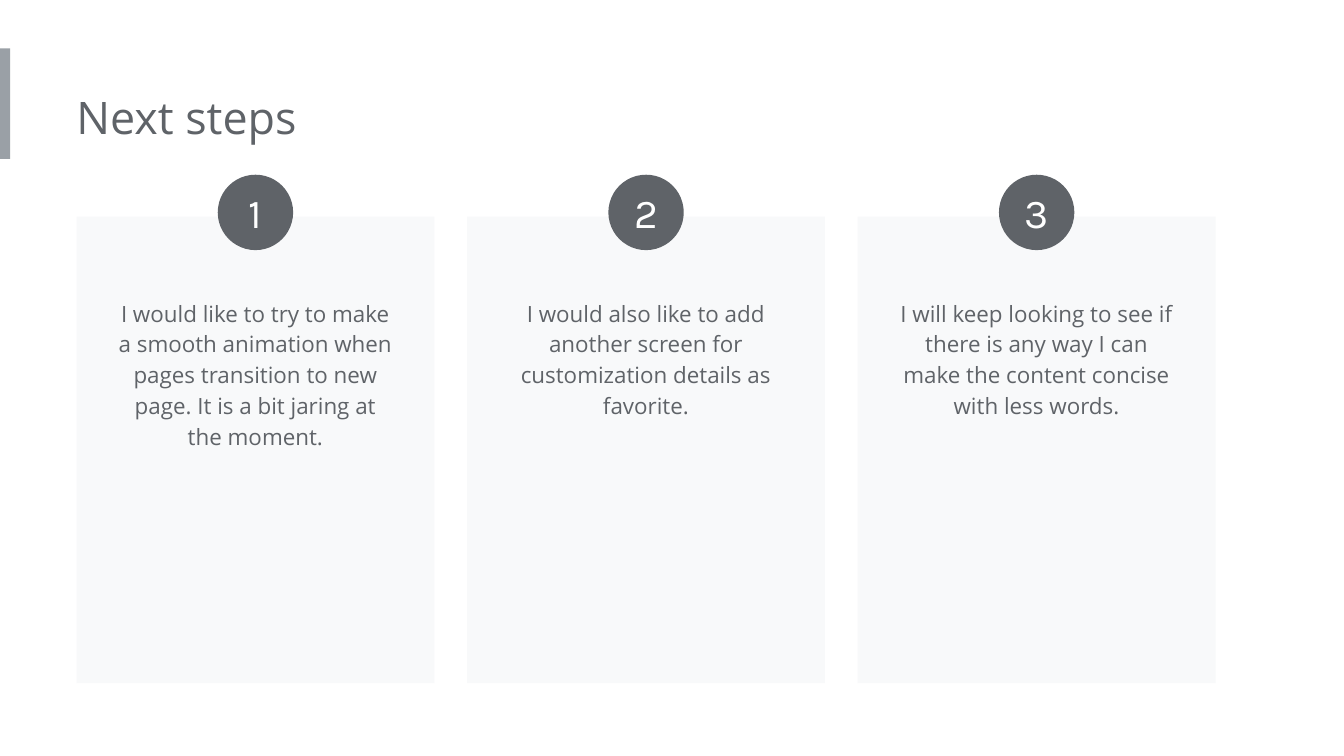
from pptx import Presentation
from pptx.dml.color import RGBColor
from pptx.enum.shapes import MSO_SHAPE as Shape
from pptx.enum.text import MSO_ANCHOR as Anchor, MSO_AUTO_SIZE as AutoSize, PP_ALIGN as Align
from pptx.util import Pt

COLORS = {
    "accent": "9AA0A6",
    "ink": "5F6368",
    "card": "F8F9FA",
    "white": "FFFFFF",
}

STEPS = [
    "I would like to try to make a smooth animation when pages transition to new page. "
    "It is a bit jaring at the moment.",
    "I would also like to add another screen for customization details as favorite.",
    "I will keep looking to see if there is any way I can make the content concise "
    "with less words.",
]

# Layout in points
CARD_LEFT, CARD_TOP, CARD_WIDTH, CARD_HEIGHT = 41, 116, 191.7, 250
CARD_PITCH = 209.25
BODY_TOP, BODY_WIDTH = 151.2, 161.3
BADGE_TOP, BADGE_SIZE = 93.6, 40.4

# Text formats
TITLE = {"name": "Open Sans", "size": Pt(24)}
BODY = {"name": "Open Sans", "size": Pt(12)}
NUMBER = {"name": "Karla", "size": Pt(22)}


def color(name):
    return RGBColor.from_string(COLORS[name])


def set_values(target, values):
    for key, value in values.items():
        setattr(target, key, value)


def write(frame, text, font, ink, margins, paragraph=None, **layout):
    """Put one formatted paragraph into a text frame."""
    left, top, right, bottom = (Pt(margin) for margin in margins)
    set_values(frame, {"margin_left": left, "margin_top": top, "margin_right": right,
                       "margin_bottom": bottom, "word_wrap": True, **layout})
    line = frame.paragraphs[0]
    set_values(line, paragraph or {})
    run = line.add_run()
    run.text = text
    set_values(run.font, font)
    run.font.color.rgb = color(ink)


def add_block(slide, kind, box, fill):
    block = slide.shapes.add_shape(kind, *(Pt(length) for length in box))
    block.shadow.inherit = False
    block.fill.solid()
    block.fill.fore_color.rgb = color(fill)
    block.line.fill.background()
    return block


def add_text(slide, box, text, font, margins, paragraph=None):
    frame = slide.shapes.add_textbox(*(Pt(length) for length in box)).text_frame
    write(frame, text, font, "ink", margins, paragraph,
          auto_size=AutoSize.SHAPE_TO_FIT_TEXT, vertical_anchor=Anchor.TOP)


def add_card(slide, left, text):
    add_block(slide, Shape.RECTANGLE, (left, CARD_TOP, CARD_WIDTH, CARD_HEIGHT), "card")
    body_left = left + (CARD_WIDTH - BODY_WIDTH) / 2
    add_text(slide, (body_left, BODY_TOP, BODY_WIDTH, 98), text, BODY, [7.2] * 4,
             {"alignment": Align.CENTER, "line_spacing": 1.15})


def add_badge(slide, left, number):
    badge_left = left + (CARD_WIDTH - BADGE_SIZE) / 2
    badge = add_block(slide, Shape.OVAL, (badge_left, BADGE_TOP, BADGE_SIZE, BADGE_SIZE), "ink")
    write(badge.text_frame, str(number), NUMBER, "white", [0] * 4,
          {"alignment": Align.CENTER}, vertical_anchor=Anchor.MIDDLE)


def main():
    deck = Presentation()
    deck.slide_width, deck.slide_height = Pt(720), Pt(405)
    slide = deck.slides.add_slide(deck.slide_layouts[6])

    # Accent bar and title
    add_block(slide, Shape.RECTANGLE, (0, 26, 5.5, 59.2), "accent")
    add_text(slide, (41, 41, 388, 44), "Next steps", TITLE, (0, 7.2, 7.2, 7.2))

    # Step cards with numbered badges
    for index, step in enumerate(STEPS):
        left = CARD_LEFT + index * CARD_PITCH
        add_card(slide, left, step)
        add_badge(slide, left, index + 1)

    deck.save("out.pptx")


if __name__ == "__main__":
    main()
